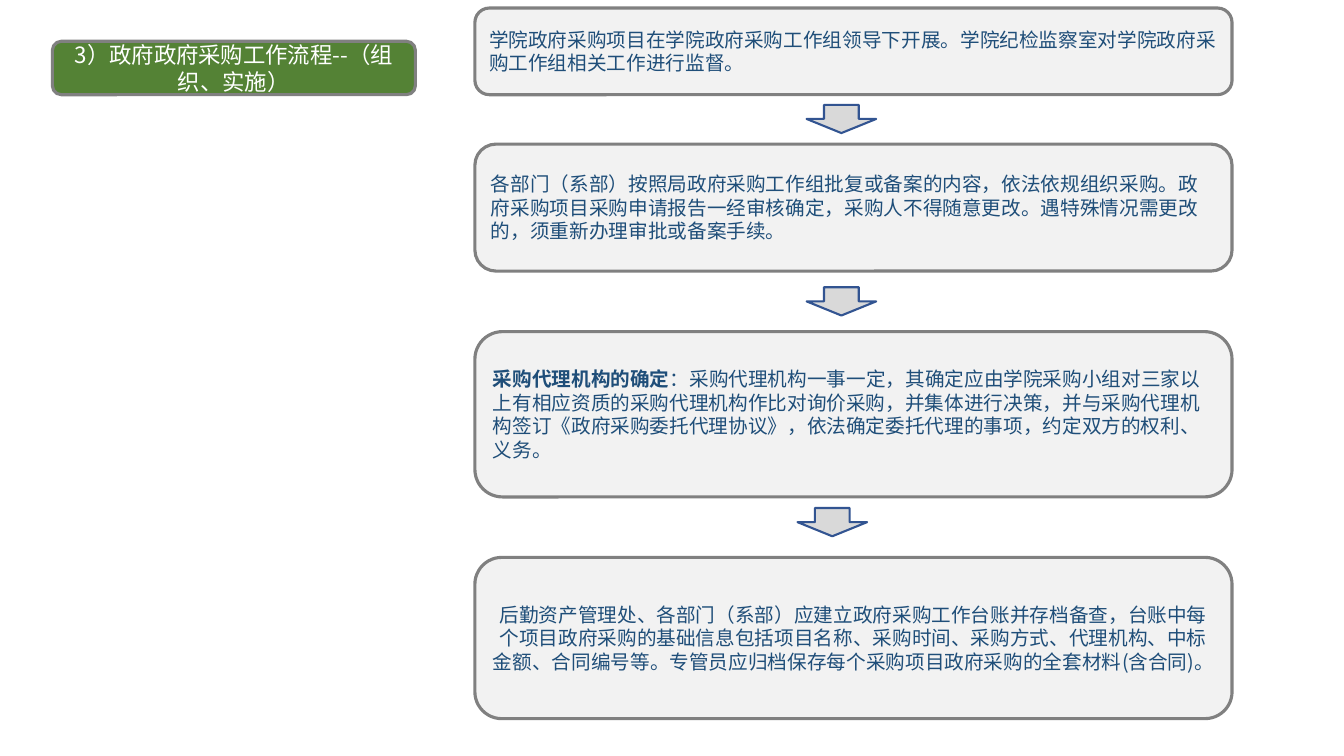
from dataclasses import dataclass

from lxml import etree
from pptx import Presentation
from pptx.dml.color import RGBColor
from pptx.enum import shapes, text
from pptx.oxml import ns
from pptx.shapes.autoshape import Shape
from pptx.slide import Slide
from pptx.util import Inches, Pt

FONT = "Noto Sans CJK SC"
COLORS = {
    "green": "548235",
    "gray": "808080",
    "pale": "F2F2F2",
    "silver": "D9D9D9",
    "navy": "325491",
    "ink": "1F4E79",
    "white": "FFFFFF",
}
LEFT, WIDTH = 4.71, 7.51
KIND = shapes.MSO_SHAPE
ALIGN = text.PP_ALIGN


@dataclass
class Step:
    top: float
    height: float
    body: str
    lead: str = ""
    align: ALIGN = ALIGN.LEFT


@dataclass
class Arrow:
    left: float
    top: float


STEPS = [
    Step(0.08, 0.86, "学院政府采购项目在学院政府采购工作组领导下开展。"
         "学院纪检监察室对学院政府采购工作组相关工作进行监督。"),
    Step(1.43, 1.26, "各部门（系部）按照局政府采购工作组批复或备案的内容，依法依规组织采购。"
         "政府采购项目采购申请报告一经审核确定，采购人不得随意更改。"
         "遇特殊情况需更改的，须重新办理审批或备案手续。"),
    Step(3.29, 1.64, "：采购代理机构一事一定，其确定应由学院采购小组对三家以上有相应资质的"
         "采购代理机构作比对询价采购，并集体进行决策，并与采购代理机构签订"
         "《政府采购委托代理协议》，依法确定委托代理的事项，约定双方的权利、义务。",
         lead="采购代理机构的确定"),
    Step(5.53, 1.6, "后勤资产管理处、各部门（系部）应建立政府采购工作台账并存档备查，"
         "台账中每个项目政府采购的基础信息包括项目名称、采购时间、采购方式、代理机构、"
         "中标金额、合同编号等。专管员应归档保存每个采购项目政府采购的全套材料(含合同)。",
         align=ALIGN.CENTER),
]
ARROWS = [Arrow(8, 1.04), Arrow(8, 2.85), Arrow(7.91, 5.04)]


def color(name: str) -> RGBColor:
    return RGBColor.from_string(COLORS[name])


def draw(slide: Slide, kind: KIND, left: float, top: float, width: float,
         height: float, fill: str, line: str, weight: float) -> Shape:
    shape = slide.shapes.add_shape(
        kind, Inches(left), Inches(top), Inches(width), Inches(height))
    shape.shadow.inherit = False
    shape.fill.solid()
    shape.fill.fore_color.rgb = color(fill)
    shape.line.color.rgb = color(line)
    shape.line.width = Pt(weight)
    return shape


def write(shape: Shape, words: str, *, size: float = 14, ink: str = "ink",
          bold: bool = False, align: ALIGN = ALIGN.LEFT) -> None:
    frame = shape.text_frame
    frame.word_wrap = True
    frame.vertical_anchor = text.MSO_ANCHOR.MIDDLE
    para = frame.paragraphs[0]
    para.alignment = align
    run = para.add_run()
    run.text = words
    font = run.font
    font.name, font.size, font.bold = FONT, Pt(size), bold
    font.color.rgb = color(ink)
    east = etree.SubElement(run._r.get_or_add_rPr(), ns.qn("a:ea"))
    east.set("typeface", FONT)


def main() -> None:
    deck = Presentation()
    deck.slide_width, deck.slide_height = Inches(13.33), Inches(7.5)
    slide = deck.slides.add_slide(deck.slide_layouts[6])

    title = draw(slide, KIND.ROUNDED_RECTANGLE, 0.52, 0.41, 3.6, 0.53,
                 "green", "gray", 2.25)
    write(title, "3）政府政府采购工作流程--（组织、实施）",
          size=16, ink="white", align=ALIGN.CENTER)

    for step in STEPS:
        box = draw(slide, KIND.ROUNDED_RECTANGLE, LEFT, step.top, WIDTH,
                   step.height, "pale", "gray", 2.25)
        if step.lead:
            write(box, step.lead, bold=True, align=step.align)
        write(box, step.body, align=step.align)

    for arrow in ARROWS:
        draw(slide, KIND.DOWN_ARROW, arrow.left, arrow.top, 0.69, 0.28,
             "silver", "navy", 1.5)

    deck.save("out.pptx")


if __name__ == "__main__":
    main()
